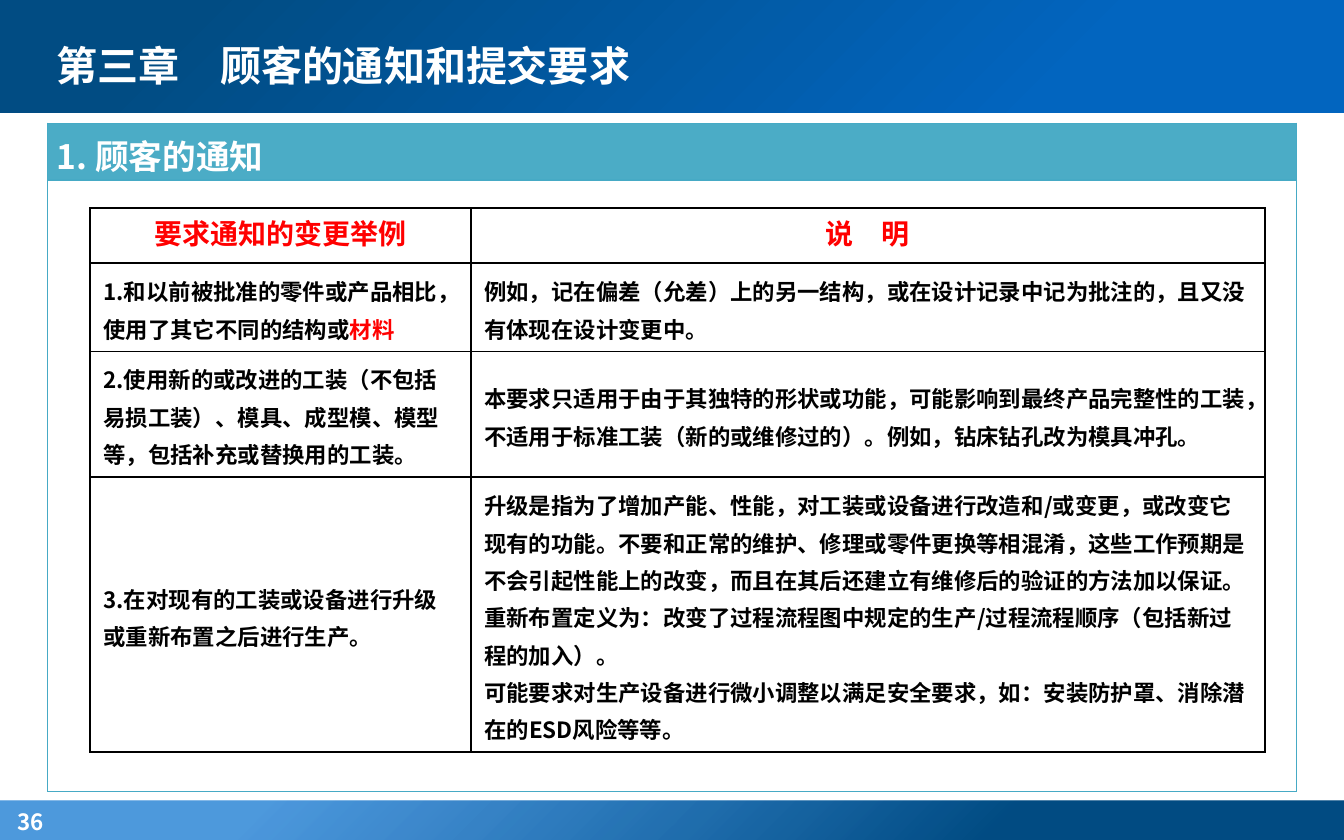
from lxml import etree
from pptx import Presentation
from pptx.dml.color import RGBColor
from pptx.enum.shapes import MSO_SHAPE
from pptx.enum.text import MSO_ANCHOR, PP_ALIGN
from pptx.oxml import parse_xml
from pptx.oxml.ns import nsdecls, qn
from pptx.util import Pt

WHITE = RGBColor(0xFF, 0xFF, 0xFF)
BLACK = RGBColor(0x00, 0x00, 0x00)
RED = RGBColor(0xFF, 0x00, 0x00)
NAVY = RGBColor(0x01, 0x4C, 0x83)
BLUE = RGBColor(0x02, 0x65, 0xBF)
SKY = RGBColor(0x02, 0x6D, 0xCE)
TEAL = RGBColor(0x4B, 0xAC, 0xC6)
TEAL_LINE = RGBColor(0x46, 0xAA, 0xC5)

CJK_FONT = "Noto Sans CJK SC"
WIDTH, HEIGHT = 720, 450

HEADINGS = ["要求通知的变更举例", "说　明"]
# Each cell is a list of paragraphs, each paragraph a list of (text, colour) runs
CHANGES = [
    ([[("1.和以前被批准的零件或产品相比，使用了其它不同的结构或", BLACK), ("材料", RED)]],
     [[("例如，记在偏差（允差）上的另一结构，或在设计记录中记为批注的，且又没有体现在设计变更中。", BLACK)]]),
    ([[("2.使用新的或改进的工装（不包括易损工装）、模具、成型模、模型等，包括补充或替换用的工装。", BLACK)]],
     [[("本要求只适用于由于其独特的形状或功能，可能影响到最终产品完整性的工装，"
        "不适用于标准工装（新的或维修过的）。例如，钻床钻孔改为模具冲孔。", BLACK)]]),
    ([[("3.在对现有的工装或设备进行升级或重新布置之后进行生产。", BLACK)]],
     [[("升级是指为了增加产能、性能，对工装或设备进行改造和/或变更，或改变它现有的功能。"
        "不要和正常的维护、修理或零件更换等相混淆，这些工作预期是不会引起性能上的改变，"
        "而且在其后还建立有维修后的验证的方法加以保证。", BLACK)],
      [("重新布置定义为：改变了过程流程图中规定的生产/过程流程顺序（包括新过程的加入）。", BLACK)],
      [("可能要求对生产设备进行微小调整以满足安全要求，如：安装防护罩、消除潜在的ESD风险等等。", BLACK)]]),
]


def write_paragraphs(text_frame, paragraphs, size, font=CJK_FONT, spacing=None, align=PP_ALIGN.LEFT):
    for index, runs in enumerate(paragraphs):
        paragraph = text_frame.add_paragraph() if index else text_frame.paragraphs[0]
        paragraph.alignment = align
        if spacing:
            paragraph.line_spacing = Pt(spacing)
        for text, colour in runs:
            run = paragraph.add_run()
            run.text = text
            run.font.size = Pt(size)
            run.font.bold = True
            run.font.color.rgb = colour
            run.font.name = font
            east_asian = etree.SubElement(run.font._element, qn("a:ea"))
            east_asian.set("typeface", CJK_FONT)


def add_label(slide, box, text, size, font=CJK_FONT):
    shape = slide.shapes.add_textbox(*map(Pt, box))
    shape.text_frame.word_wrap = True
    shape.text_frame.vertical_anchor = MSO_ANCHOR.MIDDLE
    write_paragraphs(shape.text_frame, [[(text, WHITE)]], size, font)


def add_band(slide, box, stops):
    """Full-width bar whose radial gradient spreads from the lower right corner."""
    shape = slide.shapes.add_shape(MSO_SHAPE.RECTANGLE, *map(Pt, box))
    shape.shadow.inherit = False
    shape.line.fill.background()
    stop_xml = "".join(
        f'<a:gs pos="{position * 1000}"><a:srgbClr val="{colour}">'
        f'<a:alpha val="{opacity * 1000}"/></a:srgbClr></a:gs>'
        for position, colour, opacity in stops)
    gradient = parse_xml(
        f'<a:gradFill {nsdecls("a")} rotWithShape="1"><a:gsLst>{stop_xml}</a:gsLst>'
        '<a:path path="circle"><a:fillToRect l="100000" t="100000"/></a:path></a:gradFill>')
    shape._element.spPr.find(qn("a:prstGeom")).addnext(gradient)


def add_grid(slide, left, top, columns, rows, line_colour, line_width):
    """Unfilled table with the same border around every cell."""
    table = slide.shapes.add_table(
        len(rows), len(columns), Pt(left), Pt(top), Pt(sum(columns)), Pt(sum(rows))).table
    table.first_row = table.horz_banding = False
    for column, width in zip(table.columns, columns):
        column.width = Pt(width)
    for row, height in zip(table.rows, rows):
        row.height = Pt(height)
    for cell in table.iter_cells():
        properties = cell._tc.get_or_add_tcPr()
        for side in ("lnL", "lnR", "lnT", "lnB"):
            properties.append(parse_xml(
                f'<a:{side} {nsdecls("a")} w="{Pt(line_width)}"><a:solidFill>'
                f'<a:srgbClr val="{line_colour}"/></a:solidFill></a:{side}>'))
        cell.fill.background()
    return table


def add_title_bar(slide, left, top, width, height):
    add_band(slide, (left, top, width, height), [(21, BLUE, 100), (86, NAVY, 100)])
    add_label(slide, (left + 23, top + 11.5, 460, 51),
              "第三章　顾客的通知和提交要求", 22, "Times New Roman")


def add_footer(slide, left, top, width, height):
    add_band(slide, (left, top, width, height), [(26, NAVY, 100), (80, SKY, 70)])
    add_label(slide, (left + 2.5, top + 1, 42, 20), "36", 12)


def add_section_frame(slide, left, top, width, height):
    heading_height = 30.5
    table = add_grid(slide, left, top, [width],
                     [heading_height, height - heading_height], TEAL_LINE, 0.75)
    heading = table.cell(0, 0)
    heading.fill.solid()
    heading.fill.fore_color.rgb = TEAL
    heading.margin_left = heading.margin_right = Pt(5)
    heading.margin_top = heading.margin_bottom = 0
    write_paragraphs(heading.text_frame, [[("1. 顾客的通知", WHITE)]], 18, spacing=30)


def add_change_table(slide, left, top):
    table = add_grid(slide, left, top, [204, 425.5], [29.5, 47, 67, 147.5], BLACK, 1)
    for column, heading in enumerate(HEADINGS):
        write_paragraphs(table.cell(0, column).text_frame, [[(heading, RED)]],
                         15, "Karla", 20, PP_ALIGN.CENTER)
    for row, change in enumerate(CHANGES, start=1):
        for column, paragraphs in enumerate(change):
            cell = table.cell(row, column)
            cell.vertical_anchor = MSO_ANCHOR.MIDDLE
            write_paragraphs(cell.text_frame, paragraphs, 12, spacing=20)


def main():
    presentation = Presentation()
    presentation.slide_width, presentation.slide_height = Pt(WIDTH), Pt(HEIGHT)
    slide = presentation.slides.add_slide(presentation.slide_layouts[6])

    # Bars at the top and bottom
    add_footer(slide, 0, 429, WIDTH, 22)
    add_title_bar(slide, 0, -2, WIDTH, 62.5)

    # Framed section with the table of changes
    add_section_frame(slide, 25.5, 66, 669, 358)
    add_change_table(slide, 48.25, 111.5)

    presentation.save("out.pptx")


if __name__ == "__main__":
    main()
